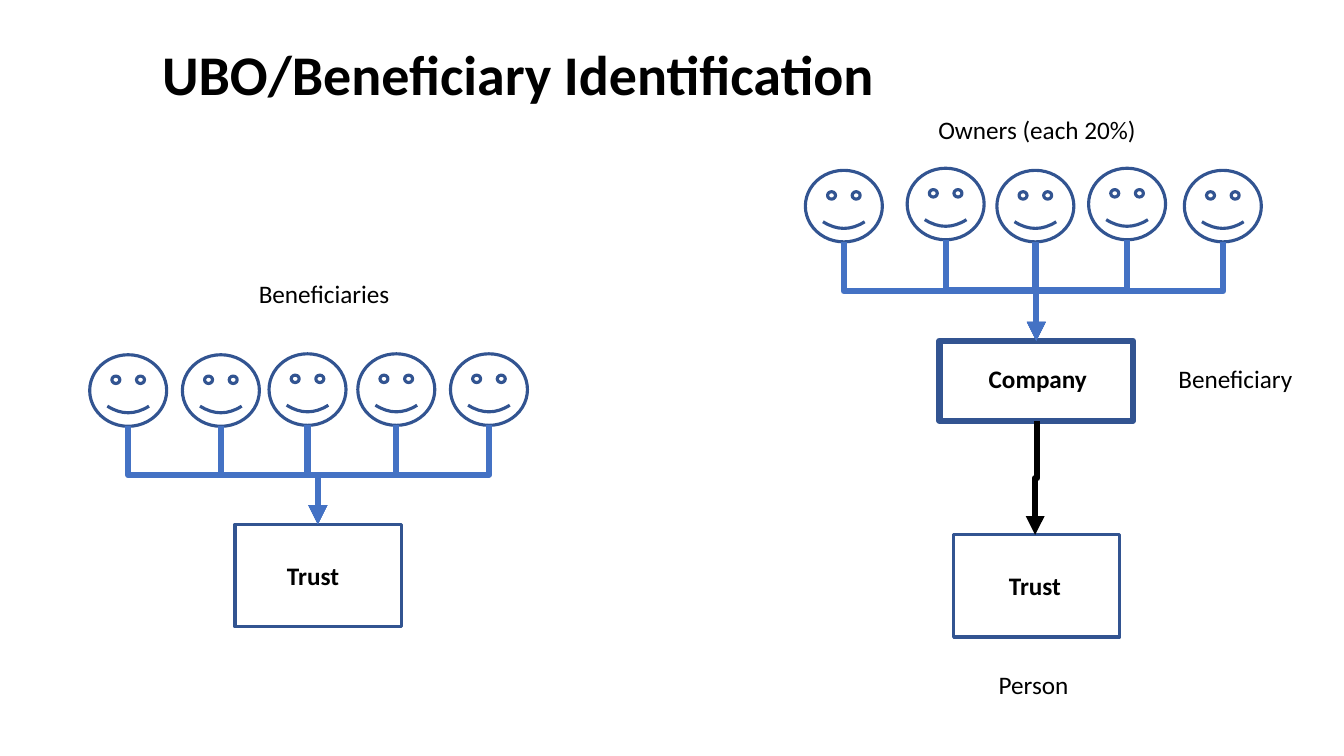
from lxml.etree import SubElement as Sub
from pptx import Presentation
from pptx.dml.color import RGBColor as Rgb
from pptx.enum.shapes import MSO_CONNECTOR as Conn, MSO_SHAPE as Form
from pptx.enum.text import MSO_AUTO_SIZE as Fit, PP_ALIGN as Align
from pptx.oxml.ns import qn
from pptx.util import Pt

INK = {"black": "000000", "navy": "325491", "blue": "4472C4"}
FACE_W, FACE_H = 55, 51.1

deck = Presentation()
deck.slide_width, deck.slide_height = Pt(960), Pt(540)
slide = deck.slides.add_slide(deck.slide_layouts[6])
shapes = slide.shapes


def label(text, x, y, w, h=29, size=18, bold=False, center=False, wrap=False):
    box = shapes.add_textbox(Pt(x), Pt(y), Pt(w), Pt(h))
    frame = box.text_frame
    frame.word_wrap = wrap
    frame.auto_size = Fit.SHAPE_TO_FIT_TEXT
    para = frame.paragraphs[0]
    para.alignment = Align.CENTER if center else Align.LEFT
    run = para.add_run()
    run.text = text
    font = run.font
    font.name, font.size, font.bold = "Calibri", Pt(size), bold
    font.color.rgb = Rgb.from_string(INK["black"])


label("UBO/Beneficiary Identification", 108.7, 24.5, 538.6, h=55.4, size=40, bold=True)
label("Owners (each 20%)", 663.1, 77.8, 157)
label("Company", 699.1, 255.6, 85, bold=True)
label("Person", 706.3, 474.5, 64.8)
label("Trust ", 675.4, 403.9, 131.8, bold=True, center=True, wrap=True)
label("Trust ", 159.8, 396.7, 131.8, bold=True, center=True, wrap=True)
label("Beneficiary", 815.8, 255.6, 133.2, center=True, wrap=True)
label("Beneficiaries", 164.9, 195.1, 133.2, center=True, wrap=True)

owners = [(575.3, 121.7), (648, 120.2), (712.1, 121.7), (777.6, 120.2), (846, 121.7)]
heirs = [(64.1, 253.4), (130.3, 253.4), (192.2, 252.7), (255.6, 252.7), (321.8, 252.7)]
forms = [
    (Form.RECTANGLE, 167.8, 374.4, 118.8, 73.4, 2.25),
    (Form.RECTANGLE, 681.1, 381.6, 118.8, 73.4, 2.25),
    (Form.RECTANGLE, 671, 243.4, 138.2, 57.2, 4.5),
]
forms += [(Form.SMILEY_FACE, x, y, FACE_W, FACE_H, 2.25) for x, y in owners + heirs]
for form, x, y, w, h, line in forms:
    shape = shapes.add_shape(form, Pt(x), Pt(y), Pt(w), Pt(h))
    shape.shadow.inherit = False
    shape.fill.background()
    shape.line.color.rgb = Rgb.from_string(INK["navy"])
    shape.line.width = Pt(line)

wires = [(740.9, 301, 739.4, 382.1, "black")]
for faces, end_x, end_y in ((owners, 740.2, 243.4), (heirs, 227, 374.4)):
    wires += [(x + FACE_W / 2, y + FACE_H, end_x, end_y, "blue") for x, y in faces]

for x1, y1, x2, y2, ink in wires:
    w, h = y2 - y1, abs(x2 - x1)
    left, top = (x1 + x2 - w) / 2, (y1 + y2 - h) / 2
    right = left + w
    start, stop = (right, left) if x2 > x1 else (left, right)
    wire = shapes.add_connector(Conn.ELBOW, Pt(start), Pt(top), Pt(stop), Pt(top + h))
    wire.line.color.rgb = Rgb.from_string(INK[ink])
    wire.line.width = Pt(4.5)
    props = wire._element.spPr
    turn = 270 if x2 > x1 else 90
    props.find(qn("a:xfrm")).set("rot", str(turn * 60000))
    Sub(props.find(qn("a:ln")), qn("a:tailEnd"), type="triangle")
    Sub(props, qn("a:effectLst"))

deck.save("out.pptx")
